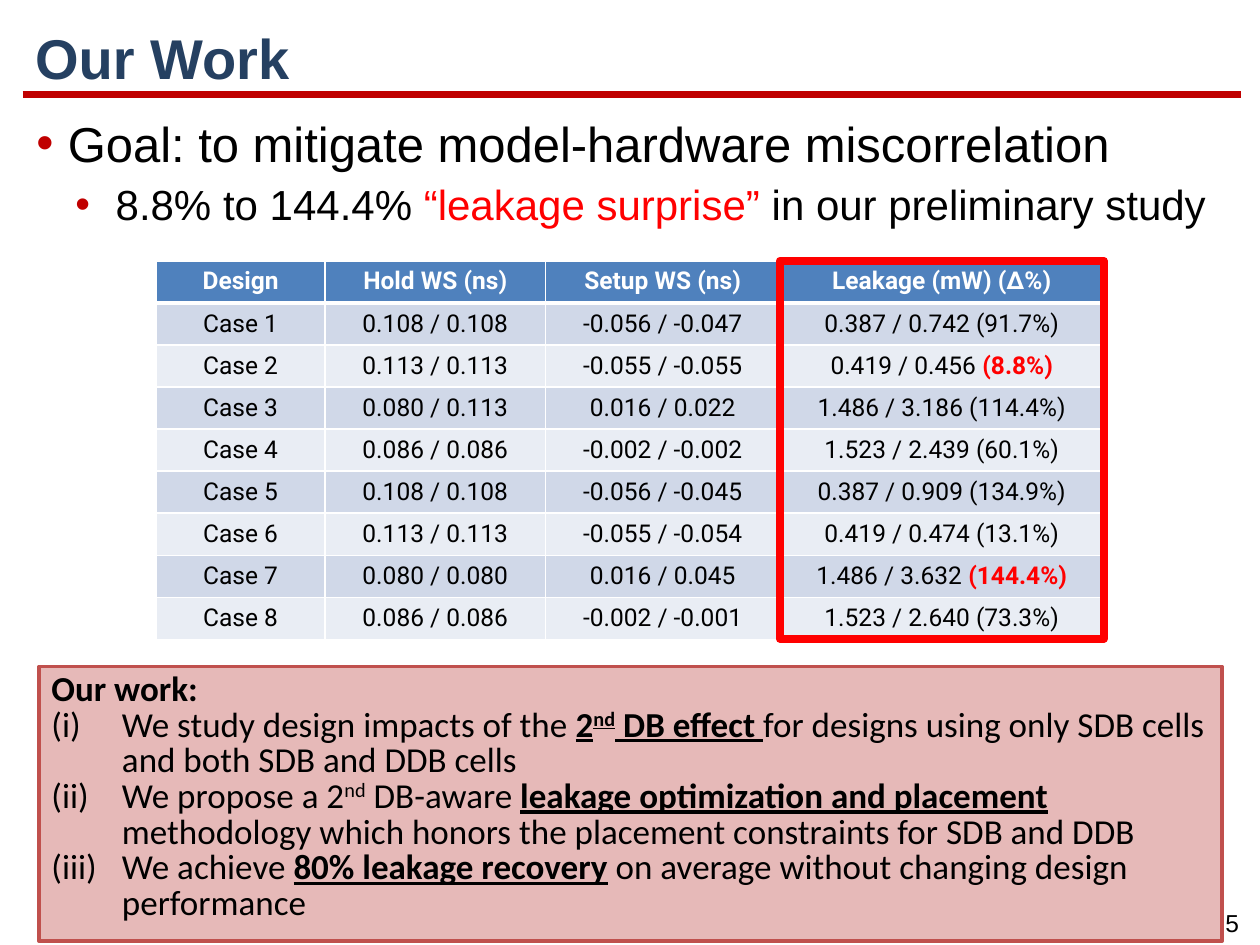
from lxml.etree import SubElement
from pptx import Presentation
from pptx.dml.color import RGBColor
from pptx.enum.shapes import MSO_CONNECTOR, MSO_SHAPE
from pptx.enum.text import MSO_ANCHOR, PP_ALIGN
from pptx.oxml.ns import qn
from pptx.util import Inches, Pt

COLORS = {
    "title": "254061", "rule": "C00000", "text": "000000", "white": "FFFFFF",
    "alert": "FF0000", "header": "4F81BD", "odd": "D0D8E8", "even": "E9EDF4",
    "panel": "E6B9B8", "panel_line": "C0504D",
}
COL_WIDTHS = [1.34, 1.75, 1.86, 2.57]
TABLE_LEFT, TABLE_TOP, TABLE_HEIGHT = 1.24, 2.07, 3
HEADERS = ["Design", "Hold WS (ns)", "Setup WS (ns)", "Leakage (mW) (Δ%)"]
CASES = [
    ("0.108 / 0.108", "-0.056 / -0.047", "0.387 / 0.742", "(91.7%)"),
    ("0.113 / 0.113", "-0.055 / -0.055", "0.419 / 0.456", "(8.8%)"),
    ("0.080 / 0.113", "0.016 / 0.022", "1.486 / 3.186", "(114.4%)"),
    ("0.086 / 0.086", "-0.002 / -0.002", "1.523 / 2.439", "(60.1%)"),
    ("0.108 / 0.108", "-0.056 / -0.045", "0.387 / 0.909", "(134.9%)"),
    ("0.113 / 0.113", "-0.055 / -0.054", "0.419 / 0.474", "(13.1%)"),
    ("0.080 / 0.080", "0.016 / 0.045", "1.486 / 3.632", "(144.4%)"),
    ("0.086 / 0.086", "-0.002 / -0.001", "1.523 / 2.640", "(73.3%)"),
]
EXTREMES = {"(8.8%)", "(144.4%)"}

KEY = {"bold": True, "underline": True}
CONTRIBUTIONS = [
    [("We study design impacts of the ", {}), ("2", KEY),
     ("nd", {**KEY, "superscript": True}), (" DB effect ", KEY),
     ("for designs using only SDB cells and both SDB and DDB cells", {})],
    [("We propose a 2", {}), ("nd", {"superscript": True}), (" DB-aware ", {}),
     ("leakage optimization and placement ", KEY),
     ("methodology which honors the placement constraints for SDB and DDB", {})],
    [("We achieve ", {}), ("80% leakage recovery", KEY),
     (" on average without changing design performance", {})],
]


def rgb(name):
    return RGBColor.from_string(COLORS[name])


def add_run(p, text, size=14, font="Arial", color="text", bold=False,
            underline=False, superscript=False):
    r = p.add_run()
    r.text = text
    r.font.size = Pt(size)
    r.font.name = font
    r.font.color.rgb = rgb(color)
    r.font.bold = bold
    r.font.underline = underline
    if superscript:
        r.font._element.set("baseline", "30000")


def add_text_box(slide, left, top, width, height, wrap=True):
    box = slide.shapes.add_textbox(Inches(left), Inches(top), Inches(width), Inches(height))
    tf = box.text_frame
    tf.word_wrap = wrap
    return tf


def add_box(slide, left, top, width, height, line, line_width, fill=None):
    sp = slide.shapes.add_shape(MSO_SHAPE.RECTANGLE, Inches(left), Inches(top),
                                Inches(width), Inches(height))
    sp.shadow.inherit = False
    sp.line.color.rgb = rgb(line)
    sp.line.width = Pt(line_width)
    if fill:
        sp.fill.solid()
        sp.fill.fore_color.rgb = rgb(fill)
    else:
        sp.fill.background()
    return sp


def set_list(p, indent, hanging, bullet=None):
    """Give a coloured bullet, or roman numbering when no bullet is given."""
    pPr = p._p.get_or_add_pPr()
    pPr.set("marL", str(Inches(indent)))
    pPr.set("indent", str(-Inches(hanging)))
    if bullet:
        clr = SubElement(pPr, qn("a:buClr"))
        SubElement(clr, qn("a:srgbClr"), val=COLORS["rule"])
        SubElement(pPr, qn("a:buFont"), typeface="Arial")
        SubElement(pPr, qn("a:buChar"), char=bullet)
    else:
        SubElement(pPr, qn("a:buFont"), typeface="+mj-lt")
        SubElement(pPr, qn("a:buAutoNum"), type="romanLcParenBoth")


def set_borders(cell, **widths):
    """Draw white borders; they must come before the fill in the cell."""
    tcPr = cell._tc.get_or_add_tcPr()
    for i, (side, width) in enumerate(widths.items()):
        ln = SubElement(tcPr, qn(f"a:ln{side}"), w=str(Pt(width)))
        fill = SubElement(ln, qn("a:solidFill"))
        SubElement(fill, qn("a:srgbClr"), val=COLORS["white"])
        tcPr.insert(i, ln)


def add_heading(slide):
    rule = slide.shapes.add_connector(MSO_CONNECTOR.STRAIGHT, Inches(0.18), Inches(0.75),
                                      Inches(9.85), Inches(0.75))
    rule.line.color.rgb = rgb("rule")
    rule.line.width = Pt(4.5)
    SubElement(rule._element.spPr, qn("a:effectLst"))
    tf = add_text_box(slide, 0.18, 0.16, 9.68, 0.65)
    tf.vertical_anchor = MSO_ANCHOR.MIDDLE
    p = tf.paragraphs[0]
    p.line_spacing = 0.9
    add_run(p, "Our Work", size=32, color="title", bold=True)


def add_page_number(slide):
    p = add_text_box(slide, 9.56, 7.16, 0.44, 0.34, wrap=False).paragraphs[0]
    p.alignment = PP_ALIGN.CENTER
    add_run(p, "5")


def add_goal(slide):
    tf = add_text_box(slide, 0.19, 0.92, 9.66, 6.08)
    goal, finding = tf.paragraphs[0], tf.add_paragraph()
    finding.level = 1
    for p, indent, hanging in ((goal, 0.25, 0.25), (finding, 0.63, 0.32)):
        p.line_spacing = 0.85
        p.space_before = Pt(8)
        set_list(p, indent, hanging, "•")
    add_run(goal, "Goal: to mitigate model-hardware miscorrelation", size=28)
    add_run(finding, "8.8% to 144.4% ", size=24)
    add_run(finding, "“leakage surprise” ", size=24, color="alert")
    add_run(finding, "in our preliminary study", size=24)


def fill_cell(cell, row, runs):
    cell.fill.solid()
    cell.fill.fore_color.rgb = rgb("header" if row == 0 else "odd" if row % 2 else "even")
    set_borders(cell, L=1, R=1, T=3 if row == 1 else 1, B=3 if row == 0 else 1)
    p = cell.text_frame.paragraphs[0]
    p.alignment = PP_ALIGN.CENTER
    for text, fmt in runs:
        add_run(p, text, font="Roboto", **fmt)


def add_results(slide):
    n_rows = len(CASES) + 1
    table = slide.shapes.add_table(n_rows, len(COL_WIDTHS), Inches(TABLE_LEFT),
                                   Inches(TABLE_TOP), Inches(sum(COL_WIDTHS)),
                                   Inches(TABLE_HEIGHT)).table
    for column, width in zip(table.columns, COL_WIDTHS):
        column.width = Inches(width)
    for row in table.rows:
        row.height = Inches(TABLE_HEIGHT / n_rows)

    for col, text in enumerate(HEADERS):
        fill_cell(table.cell(0, col), 0, [(text, {"color": "white", "bold": True})])
    for row, (hold, setup, leakage, change) in enumerate(CASES, start=1):
        for col, text in enumerate((f"Case {row}", hold, setup)):
            fill_cell(table.cell(row, col), row, [(text, {})])
        fmt = {"color": "alert", "bold": True} if change in EXTREMES else {}
        fill_cell(table.cell(row, 3), row, [(f"{leakage} ", {}), (change, fmt)])


def add_contributions(slide):
    sp = add_box(slide, 0.31, 5.29, 9.39, 2.18, "panel_line", 2, fill="panel")
    tf = sp.text_frame
    tf.word_wrap = True
    tf.vertical_anchor = MSO_ANCHOR.TOP
    add_run(tf.paragraphs[0], "Our work:", size=20, font="Calibri", bold=True)
    for runs in CONTRIBUTIONS:
        p = tf.add_paragraph()
        set_list(p, 0.56, 0.56)
        for text, fmt in runs:
            add_run(p, text, size=20, font="Calibri", **fmt)
    for p in tf.paragraphs:
        p.alignment = PP_ALIGN.LEFT
        p.line_spacing = 0.85


def main():
    prs = Presentation()
    prs.slide_width, prs.slide_height = Inches(10), Inches(7.5)
    slide = prs.slides.add_slide(prs.slide_layouts[6])
    add_heading(slide)
    add_page_number(slide)
    add_goal(slide)
    add_results(slide)
    add_contributions(slide)
    add_box(slide, TABLE_LEFT + sum(COL_WIDTHS[:3]), TABLE_TOP, COL_WIDTHS[3],
            TABLE_HEIGHT, "alert", 4.5)
    prs.save("out.pptx")


if __name__ == "__main__":
    main()
